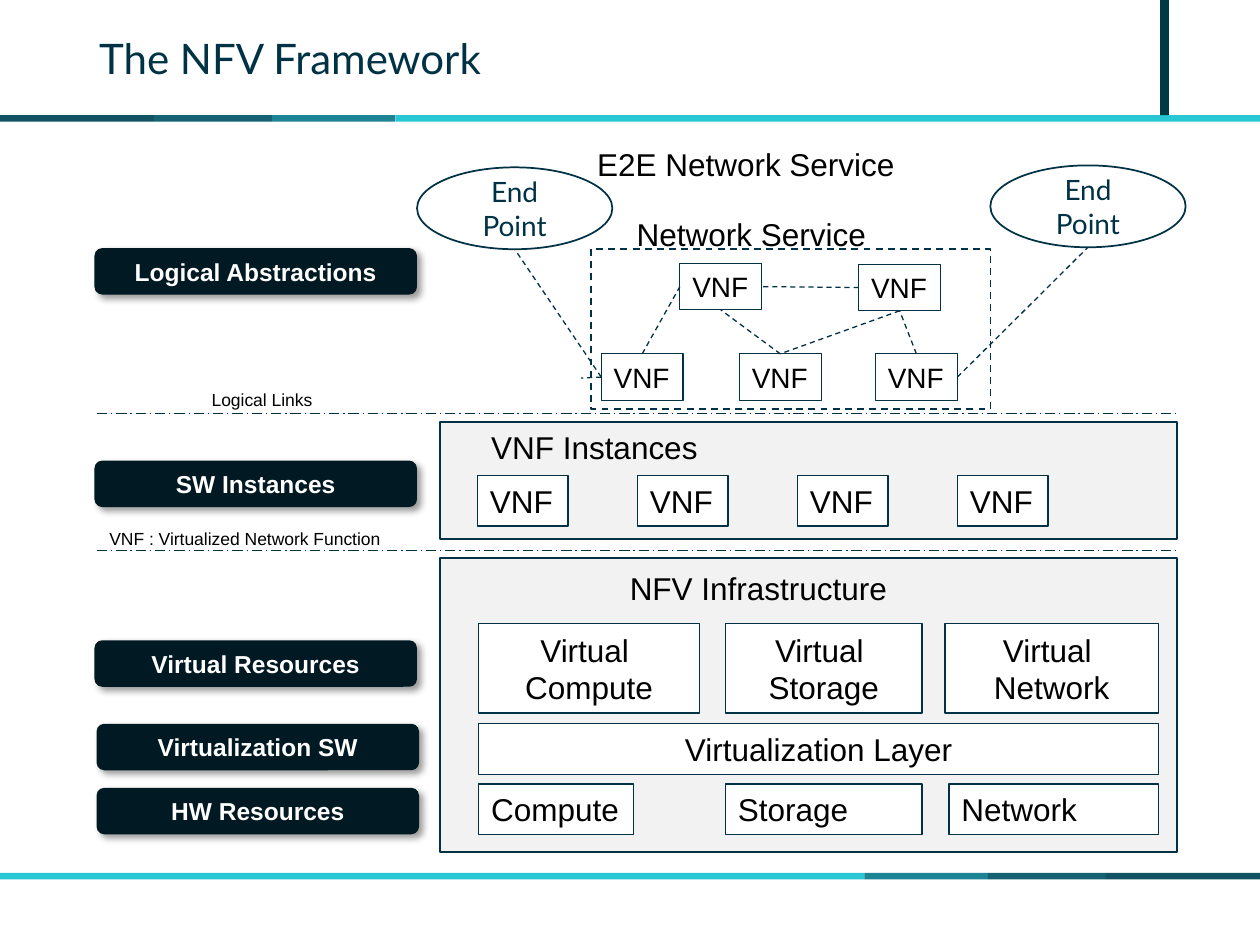
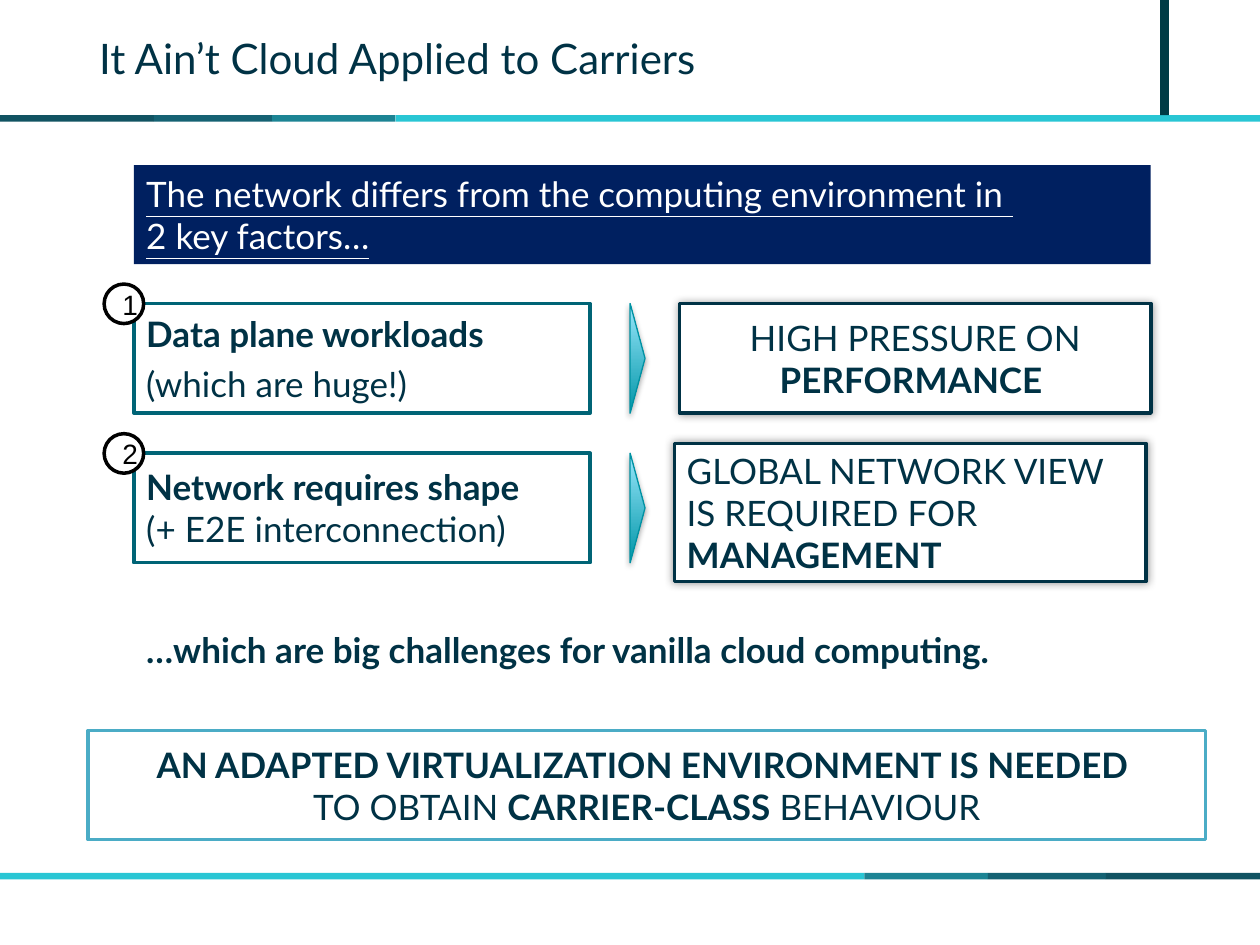
"""Build two slides on the NFV framework and its carrier requirements."""
from dataclasses import dataclass, replace
from typing import Any, NamedTuple, Optional

import lxml.etree
import pptx
import pptx.dml.color
import pptx.enum.dml
import pptx.enum.shapes
import pptx.enum.text
import pptx.oxml.ns
import pptx.util

Pt = pptx.util.Pt
KIND = pptx.enum.shapes.MSO_SHAPE
ALIGN = pptx.enum.text.PP_ALIGN
ANCHOR = pptx.enum.text.MSO_ANCHOR
DASH = pptx.enum.dml.MSO_LINE

NAVY, WHITE, BLACK = "003245", "FFFFFF", "000000"
BAND_COLORS = ("115362", "156273", "1C8494", "29C6D4")
BAND_WIDTHS = (88, 67.5, 70.5, 494)
TOP, LEFT, BOTTOM, RIGHT = range(4)


class Shadow(NamedTuple):
    """Outer shadow: opacity in percent, lengths in points, angle in degrees."""
    opacity: int
    blur: float
    distance: float
    angle: int


@dataclass(frozen=True)
class Style:
    """Look of a shape and its text; a kind of None means a text box."""
    kind: Any = KIND.RECTANGLE
    fill: Optional[str] = None
    gradient: Optional[tuple[str, str]] = None
    line: Optional[str] = None
    line_width: float = 0.75
    dash: Any = None
    shadow: Optional[Shadow] = None
    font: str = "Arial"
    size: float = 18
    color: str = BLACK
    bold: bool = False
    underline: bool = False
    align: Any = ALIGN.LEFT
    anchor: Any = ANCHOR.MIDDLE
    wrap: bool = True
    space_between: float = 0


class Box(NamedTuple):
    """Place and text; newline splits paragraphs, \\v lines, * toggles bold."""
    left: float
    top: float
    width: float
    height: float
    text: str = ""


class Anchor(NamedTuple):
    """Middle of one side of a shape."""
    shape: Any
    side: int


CAPTION = Style(kind=None, anchor=ANCHOR.TOP, wrap=False)
SMALL_CAPTION = replace(CAPTION, size=10)
TITLE = replace(CAPTION, font="Lato", size=24, color=NAVY, wrap=True)
PANEL = Style(fill="F2F2F2", line=NAVY, line_width=1)
NETWORK_FRAME = Style(line=NAVY, line_width=1, dash=DASH.DASH)
TIGHT_BOX = Style(fill=WHITE, line=NAVY, wrap=False)
LEFT_BOX = replace(TIGHT_BOX, wrap=True)
CENTRED_BOX = replace(LEFT_BOX, align=ALIGN.CENTER)
LOGICAL_VNF = replace(TIGHT_BOX, size=16)
END_POINT = replace(CENTRED_BOX, kind=KIND.OVAL, line_width=1, font="Lato",
                    size=16, color=NAVY)
LAYER_LABEL = Style(kind=KIND.ROUNDED_RECTANGLE, fill="001922", size=14,
                    color=WHITE, bold=True, align=ALIGN.CENTER,
                    shadow=Shadow(40, 4, 3, 45))
STATEMENT = Style(fill=WHITE, line="006476", line_width=2, font="Lato", size=20,
                  color=NAVY, space_between=4.8)
DEMAND = replace(STATEMENT, line=NAVY, shadow=Shadow(40, 5, 0, 0))
CONCLUSION = replace(STATEMENT, line="4BACC6", align=ALIGN.CENTER)
REMARK = replace(TITLE, size=20)
BANNER = replace(STATEMENT, fill="002060", line=None, color=WHITE, underline=True)
NUMBER = Style(kind=KIND.OVAL, fill=WHITE, line=BLACK, line_width=2, size=16,
               align=ALIGN.CENTER)
POINTER = Style(kind=KIND.PENTAGON, gradient=("0095A7", "99E7FC"), line="0092A3",
                shadow=Shadow(35, 3.1, 1.8, 90))


def rgb(value: str) -> pptx.dml.color.RGBColor:
    """Turn a hex string into a colour."""
    return pptx.dml.color.RGBColor.from_string(value)


def apply_format(target: Any, values: dict[str, Any]) -> None:
    """Set every named attribute on the target."""
    for name, value in values.items():
        setattr(target, name, value)


def add_child(parent: Any, tag: str, **attributes: Any) -> Any:
    """Append a DrawingML element."""
    return lxml.etree.SubElement(parent, pptx.oxml.ns.qn(tag),
                                 {key: str(value) for key, value in attributes.items()})


def write_text(shape: Any, text: str, style: Style) -> None:
    """Fill a shape with formatted text."""
    frame = shape.text_frame
    apply_format(frame, {"word_wrap": style.wrap, "vertical_anchor": style.anchor})
    for index, content in enumerate(text.split("\n")):
        paragraph = frame.add_paragraph() if index else frame.paragraphs[0]
        paragraph.alignment = style.align
        if index and style.space_between:
            paragraph.space_before = Pt(style.space_between)
        for part, piece in enumerate(content.split("*")):
            for row, words in enumerate(piece.split("\v")):
                if row:
                    paragraph.add_line_break()
                if not words:
                    continue
                run = paragraph.add_run()
                run.text = words
                apply_format(run.font, {
                    "name": style.font, "size": Pt(style.size),
                    "bold": style.bold or part % 2 == 1,
                    "underline": style.underline})
                run.font.color.rgb = rgb(style.color)


def paint(shape: Any, style: Style) -> None:
    """Apply fill, line and shadow to a preset shape."""
    if style.gradient:
        shape.fill.gradient()
        shape.fill.gradient_angle = 90
        for stop, color in zip(shape.fill.gradient_stops, style.gradient):
            stop.color.rgb = rgb(color)
    elif style.fill:
        shape.fill.solid()
        shape.fill.fore_color.rgb = rgb(style.fill)
    else:
        shape.fill.background()
    if style.line:
        shape.line.color.rgb = rgb(style.line)
        apply_format(shape.line, {"width": Pt(style.line_width),
                                  "dash_style": style.dash})
    else:
        shape.line.fill.background()
    shape.shadow.inherit = False
    if style.shadow:
        effects = shape._element.spPr.find(pptx.oxml.ns.qn("a:effectLst"))
        outer = add_child(effects, "a:outerShdw", blurRad=Pt(style.shadow.blur),
                          dist=Pt(style.shadow.distance),
                          dir=style.shadow.angle * 60000, algn="ctr", rotWithShape=0)
        color = add_child(outer, "a:srgbClr", val=BLACK)
        add_child(color, "a:alpha", val=style.shadow.opacity * 1000)


def draw_box(slide: Any, box: Box, style: Style) -> Any:
    """Draw one shape or text box with its text."""
    place = [Pt(length) for length in box[:4]]
    if style.kind is None:
        shape = slide.shapes.add_textbox(*place)
    else:
        shape = slide.shapes.add_shape(style.kind, *place)
        paint(shape, style)
    if box.text:
        write_text(shape, box.text, style)
    return shape


def draw_boxes(slide: Any, style: Style, *boxes: Box) -> list[Any]:
    """Draw several boxes in one style."""
    return [draw_box(slide, box, style) for box in boxes]


def draw_line(slide: Any, begin: tuple[int, int], end: tuple[int, int],
              color: str = NAVY, dash: Any = DASH.DASH) -> Any:
    """Draw a thin dashed straight line."""
    connector = slide.shapes.add_connector(
        pptx.enum.shapes.MSO_CONNECTOR.STRAIGHT, *begin, *end)
    connector.line.color.rgb = rgb(color)
    apply_format(connector.line, {"width": Pt(0.75), "dash_style": dash})
    add_child(connector._element.spPr, "a:effectLst")
    return connector


def side_point(anchor: Anchor) -> tuple[int, int]:
    """Find the middle of a side."""
    shape, side = anchor
    across = {TOP: 0.5, LEFT: 0, BOTTOM: 0.5, RIGHT: 1}[side]
    down = {TOP: 0, LEFT: 0.5, BOTTOM: 1, RIGHT: 0.5}[side]
    return (int(shape.left + across * shape.width),
            int(shape.top + down * shape.height))


def link(slide: Any, begin: Anchor, end: Anchor) -> None:
    """Draw a logical link and join it to the rectangles it meets."""
    connector = draw_line(slide, side_point(begin), side_point(end))
    for anchor, join in ((begin, connector.begin_connect), (end, connector.end_connect)):
        if anchor.shape.auto_shape_type == KIND.RECTANGLE:
            join(*anchor)


def draw_band(slide: Any, top: float, segments: list[tuple[str, float]]) -> None:
    """Draw a coloured band across the slide."""
    left = 0.0
    for color, width in segments:
        draw_box(slide, Box(left, top, width, 3.7), Style(fill=color))
        left += width


def start_slide(presentation: Any, title: str) -> Any:
    """Add a slide with bands, corner bar and title."""
    slide = presentation.slides.add_slide(presentation.slide_layouts[6])
    segments = list(zip(BAND_COLORS, BAND_WIDTHS))
    draw_band(slide, 65.8, segments)
    draw_band(slide, 498.8, segments[::-1])
    draw_box(slide, Box(663, 0, 5, 65.8), Style(fill="003B45"))
    draw_box(slide, Box(49.6, 15, 600, 51, title), TITLE)
    return slide


def build_framework(presentation: Any) -> None:
    """Build the layered framework diagram."""
    slide = start_slide(presentation, "The NFV Framework")
    draw_boxes(slide, PANEL, Box(251.3, 241.2, 421.2, 67),
               Box(251.3, 319, 421.2, 167.8))
    draw_box(slide, Box(337.8, 142.3, 228.2, 91.4), NETWORK_FRAME)
    draw_boxes(slide, CAPTION,
               Box(334.1, 79.2, 186.5, 29, "E2E Network Service"),
               Box(356.8, 119.4, 146.9, 29, "Network Service"),
               Box(273.6, 241.2, 134.6, 29, "VNF Instances"),
               Box(352.8, 321.8, 162.7, 29, "NFV Infrastructure"))
    draw_boxes(slide, SMALL_CAPTION,
               Box(113.8, 218.9, 72.7, 19.4, "Logical Links"),
               Box(55.4, 298.1, 171.4, 19.4, "VNF : Virtualized Network Function"))
    for height in (236.2, 314.6):
        draw_line(slide, (Pt(55.4), Pt(height)), (Pt(672.5), Pt(height)), "003143",
                  DASH.LONG_DASH_DOT)

    left_end, right_end = draw_boxes(slide, END_POINT,
                                     Box(238.3, 95.6, 111.6, 46.8, "End Point"),
                                     Box(565.9, 94.5, 111.6, 46.8, "End Point"))
    upper_left, upper_right, lower_left, lower_middle, lower_right = draw_boxes(
        slide, LOGICAL_VNF,
        *(Box(left, top, 46.8, 26.6, "VNF") for left, top in (
            (388.5, 150.5), (490.7, 151), (343.6, 202.2), (422.5, 202.2), (500.3, 202.2))))
    for begin, begin_side, end, end_side in (
            (lower_left, LEFT, left_end, BOTTOM),
            (lower_right, RIGHT, right_end, BOTTOM),
            (lower_left, TOP, upper_left, LEFT),
            (lower_middle, TOP, upper_left, BOTTOM),
            (upper_right, LEFT, upper_left, RIGHT),
            (upper_right, BOTTOM, lower_middle, TOP),
            (lower_right, TOP, upper_right, BOTTOM)):
        link(slide, Anchor(begin, begin_side), Anchor(end, end_side))
    stub = draw_line(slide, side_point(Anchor(lower_left, LEFT)), (Pt(332), Pt(216)))
    stub.begin_connect(lower_left, LEFT)

    draw_boxes(slide, TIGHT_BOX,
               *(Box(272.9 + 91.4 * index, 271.6, 51.8, 29, "VNF") for index in range(4)),
               Box(273.6, 448, 88.6, 29, "Compute"))
    draw_boxes(slide, LEFT_BOX, Box(414.6, 448, 112.3, 29, "Storage"),
               Box(542.3, 448, 119.7, 29, "Network"))
    draw_boxes(slide, CENTRED_BOX,
               Box(273.6, 356.4, 126, 51, "Virtual \nCompute"),
               Box(414.6, 356.4, 112.3, 51, "Virtual \nStorage"),
               Box(540, 356.4, 122, 51, "Virtual \nNetwork"),
               Box(273.6, 413.5, 388.4, 29, "Virtualization Layer"))
    draw_boxes(slide, LAYER_LABEL,
               *(Box(left, top, 184.3, 26.6, text) for left, top, text in (
                   (54, 141.8, "Logical Abstractions"), (54, 263.2, "SW Instances"),
                   (54, 365.9, "Virtual Resources"), (55.2, 413.6, "Virtualization SW"),
                   (55.2, 450.2, "HW Resources"))))


def build_carriers(presentation: Any) -> None:
    """Build the slide on the two key factors."""
    slide = start_slide(presentation, "It Ain’t Cloud Applied to Carriers")
    draw_box(slide, Box(76.5, 94.4, 581, 56.6,
                        "The network differs from the computing environment in \v"
                        "2 key factors…"), BANNER)
    factors = ("*Data plane workloads*\n(which are huge!)",
               "*Network requires shape*\v(+ E2E interconnection)")
    for index, factor in enumerate(factors):
        top = 173.5 + 85.5 * index
        draw_box(slide, Box(76.5, top, 260.8, 62.6, factor), STATEMENT)
        pointer = draw_box(slide, Box(360, top, 8.6, 62.6), POINTER)
        pointer.adjustments[0] = 0.99
        draw_box(slide, Box(59.5, top - 11.2, 22.6, 22.6, str(index + 1)), NUMBER)
    draw_box(slide, Box(388.3, 173.5, 269.5, 62.6, "HIGH PRESSURE ON *PERFORMANCE *"),
             replace(DEMAND, align=ALIGN.CENTER))
    draw_box(slide, Box(385.3, 253.3, 269.5, 79,
                        "GLOBAL NETWORK VIEW IS REQUIRED FOR *MANAGEMENT*"), DEMAND)
    draw_box(slide, Box(76.5, 355.5, 590, 28,
                        "*…which are big challenges for vanilla cloud computing.*"), REMARK)
    draw_box(slide, Box(50.2, 417.4, 638.8, 62.4,
                        "*AN ADAPTED VIRTUALIZATION ENVIRONMENT IS NEEDED \v*"
                        "TO OBTAIN *CARRIER-CLASS* BEHAVIOUR"), CONCLUSION)


def main() -> None:
    """Create and save the presentation."""
    presentation = pptx.Presentation()
    apply_format(presentation, {"slide_width": Pt(720), "slide_height": Pt(540)})
    build_framework(presentation)
    build_carriers(presentation)
    presentation.save("out.pptx")


if __name__ == "__main__":
    main()
